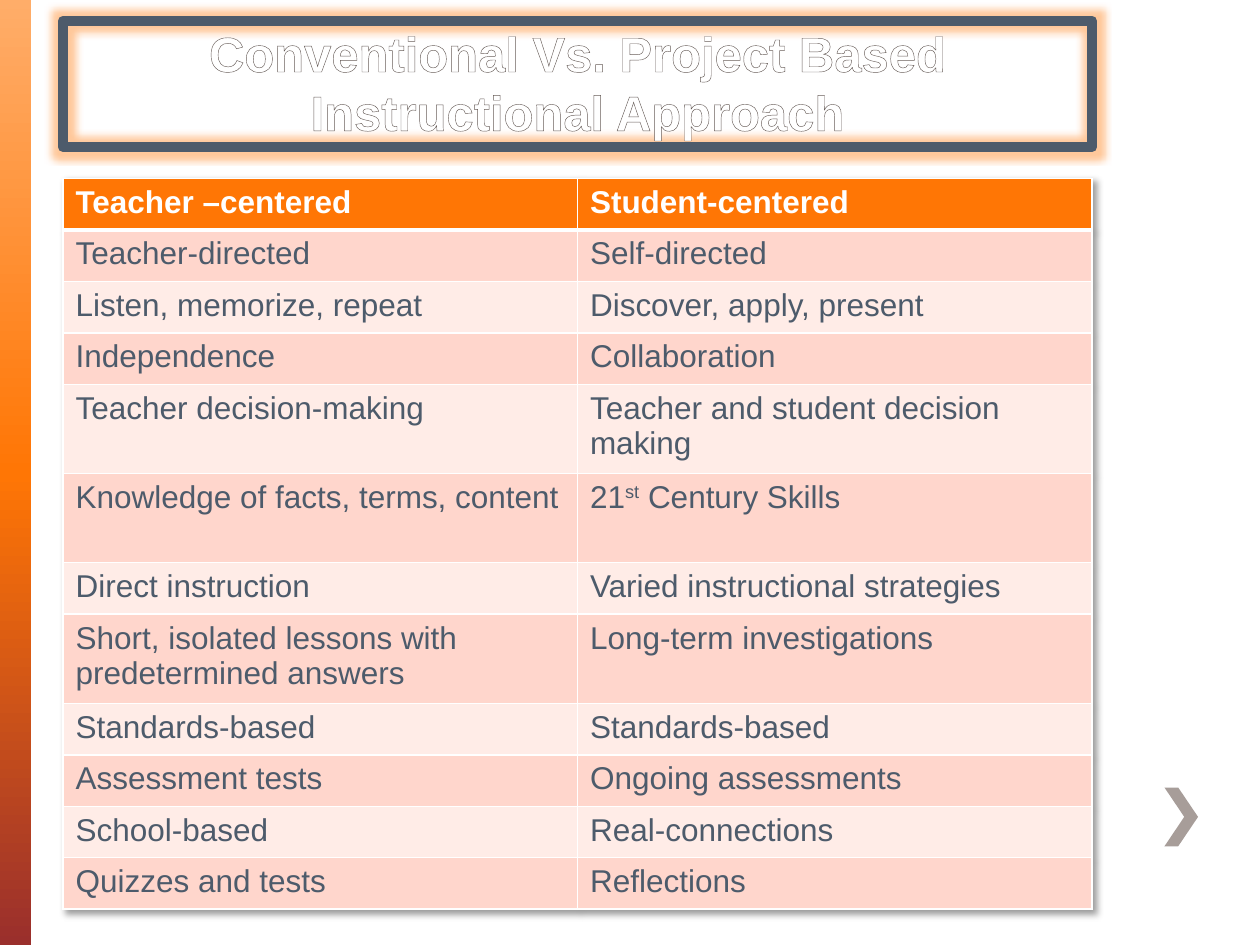
from lxml.etree import SubElement as Sub
from pptx import Presentation
from pptx.dml.color import RGBColor as RGB
from pptx.enum.shapes import MSO_SHAPE as Shape
from pptx.enum.text import MSO_ANCHOR as Anchor, PP_ALIGN as Align
from pptx.oxml.ns import qn
from pptx.util import Inches, Pt

COLS, ROWS = 120, 90
INK = {
    "white": "FFFFFF", "slate": "4D5B6B", "edge": "675D59", "arrow": "A79D99",
    "peach": "FFAD69", "orange": "FF7605", "brick": "9A2F2C",
    "rose": "FFD6CC", "blush": "FFECE7", "black": "000000",
}
HEAD = ("Teacher –centered", "Student-centered")
PAIRS = [
    ("Teacher-directed", "Self-directed"),
    ("Listen, memorize, repeat", "Discover, apply, present"),
    ("Independence", "Collaboration"),
    ("Teacher decision-making", "Teacher and student decision making"),
    ("Knowledge of facts, terms, content", "21^st^ Century Skills"),
    ("Direct instruction", "Varied instructional strategies"),
    ("Short, isolated lessons with predetermined answers", "Long-term investigations"),
    ("Standards-based", "Standards-based"),
    ("Assessment tests", "Ongoing assessments"),
    ("School-based", "Real-connections"),
    ("Quizzes and tests", "Reflections"),
]
TALL = {4, 5, 7}


def node(top, tag, **attrs):
    return Sub(top, qn(f"a:{tag}"), {k: str(v) for k, v in attrs.items()})


def tint(top, ink, alpha=None):
    clr = node(top, "srgbClr", val=INK[ink])
    if alpha:
        node(clr, "alpha", val=alpha * 1000)


def write(frame, text, size=18, ink="slate", bold=False, align=Align.LEFT, edge=None):
    para = frame.paragraphs[0]
    para.alignment = align
    for i, part in enumerate(text.split("^")):
        run = para.add_run()
        run.text = part
        font = run.font
        font.name, font.size, font.bold = "Arial", Pt(size), bold
        font.color.rgb = RGB.from_string(INK[ink])
        props = run._r.get_or_add_rPr()
        if i % 2:
            props.set("baseline", "30000")
        if edge:
            line = node(props, "ln", w=Pt(1))
            tint(node(line, "solidFill"), edge)
            props.insert(0, line)


class Deck:
    def __init__(self):
        self.prs = Presentation()
        self.prs.slide_width, self.prs.slide_height = Inches(10), Inches(7.5)
        self.slide = self.prs.slides.add_slide(self.prs.slide_layouts[5])
        self.shapes = self.slide.shapes

    def box(self, x, y, w, h):
        dx, dy = self.prs.slide_width / COLS, self.prs.slide_height / ROWS
        return [int(v) for v in (x * dx, y * dy, w * dx, h * dy)]

    def shape(self, kind, *area):
        shape = self.shapes.add_shape(kind, *self.box(*area))
        shape.shadow.inherit = False
        shape.line.fill.background()
        return shape

    def band(self, *area, stops):
        bar = self.shape(Shape.RECTANGLE, *area)
        bar.fill.gradient()
        bar.fill.gradient_angle = 270
        held = bar._element.spPr.find(qn("a:gradFill")).find(qn("a:gsLst"))
        for old in list(held):
            held.remove(old)
        for pos, ink in stops:
            tint(node(held, "gs", pos=pos * 1000), ink)

    def arrow(self, *area):
        mark = self.shape(Shape.CHEVRON, *area)
        mark.adjustments[0] = 0.59
        mark.fill.solid()
        mark.fill.fore_color.rgb = RGB.from_string(INK["arrow"])

    def title(self, text, *area):
        head = self.shapes.title
        head.left, head.top, head.width, head.height = self.box(*area)
        head.line.width = Pt(6)
        head.line.color.rgb = RGB.from_string(INK["slate"])
        node(head.line._ln, "round")
        glow = node(node(head._element.spPr, "effectLst"), "glow", rad=Inches(0.11))
        tint(glow, "orange", 40)
        frame = head.text_frame
        frame.word_wrap, frame.vertical_anchor = True, Anchor.BOTTOM
        write(frame, text, size=28, ink="white", bold=True, align=Align.CENTER, edge="edge")

    def cell(self, cell, text, fill, base=1, **style):
        props = cell._tc.get_or_add_tcPr()
        for side, width in zip("LRTB", (1, 1, 1, base)):
            tint(node(node(props, f"ln{side}", w=Pt(width)), "solidFill"), "white")
        cell.fill.solid()
        cell.fill.fore_color.rgb = RGB.from_string(INK[fill])
        write(cell.text_frame, text, **style)

    def table(self, *area):
        grid = self.shapes.add_table(len(PAIRS) + 1, 2, *self.box(*area)).table
        cast = node(node(grid._tbl.tblPr, "effectLst"), "outerShdw",
                    blurRad=Pt(4), dist=Pt(3), dir=2700000, algn="tl", rotWithShape=0)
        tint(cast, "black", 40)
        grid._tbl.tblPr.insert(0, cast.getparent())
        for r, pair in enumerate([HEAD] + PAIRS):
            grid.rows[r].height = self.box(0, 0, 0, 8.5 if r in TALL | {4} and r != 7 or r == 7 else 4.9)[3]
            for c, text in enumerate(pair):
                if r == 0:
                    self.cell(grid.cell(r, c), text, "orange", base=3, ink="white", bold=True)
                else:
                    self.cell(grid.cell(r, c), text, "rose" if r % 2 else "blush")


def main():
    deck = Deck()
    deck.band(0, 0, 3, ROWS, stops=[(0, "peach"), (50, "orange"), (100, "brick")])
    deck.arrow(110.9, 75, 3.2, 5.6)
    deck.title("Conventional Vs. Project Based Instructional Approach", 6, 2, 98, 12)
    deck.table(6, 17, 98, 70)
    deck.prs.save("out.pptx")


if __name__ == "__main__":
    main()
